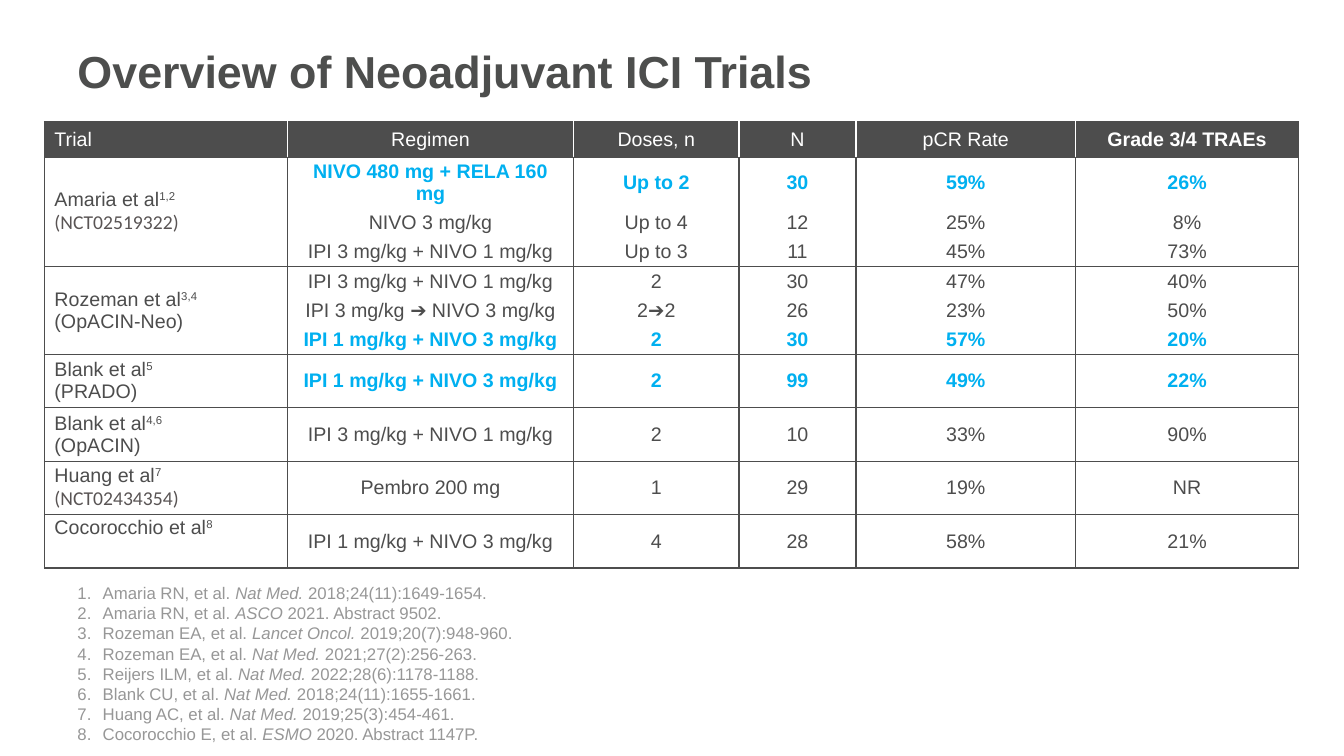
"""Build a slide that compares neoadjuvant ICI trials in a table with references."""
import dataclasses

import lxml.etree
import pptx
import pptx.dml.color
import pptx.enum.text
import pptx.oxml.ns
import pptx.util

Inches = pptx.util.Inches
Pt = pptx.util.Pt
RGBColor = pptx.dml.color.RGBColor
ANCHOR = pptx.enum.text.MSO_ANCHOR
ALIGN = pptx.enum.text.PP_ALIGN
qn = pptx.oxml.ns.qn

TITLE_GREY = RGBColor(0x4D, 0x4E, 0x4D)
DARK_GREY = RGBColor(0x4D, 0x4D, 0x4D)
REGISTRY_GREY = RGBColor(0x59, 0x54, 0x54)
REFERENCE_GREY = RGBColor(0x97, 0x97, 0x97)
HIGHLIGHT = RGBColor(0x00, 0xB0, 0xF0)
WHITE = RGBColor(0xFF, 0xFF, 0xFF)


@dataclasses.dataclass(frozen=True)
class Arm:
    values: tuple[str, ...]
    highlighted: bool = False


@dataclasses.dataclass(frozen=True)
class Trial:
    author: str
    citations: str
    label: str
    arms: tuple[Arm, ...]


@dataclasses.dataclass(frozen=True)
class Reference:
    authors: str
    journal: str
    details: str


HEADERS = ("Trial", "Regimen", "Doses, n", "N", "pCR Rate", "Grade 3/4 TRAEs")
COLUMN_WIDTHS = (2.41, 2.84, 1.64, 1.16, 2.18, 2.21)
HEADER_HEIGHT, ARM_HEIGHT, SINGLE_HEIGHT = 0.35, 0.29, 0.53
IPI3_NIVO1 = "IPI 3 mg/kg + NIVO 1 mg/kg"
IPI1_NIVO3 = "IPI 1 mg/kg + NIVO 3 mg/kg"

TRIALS = (
    Trial("Amaria et al", "1,2", "(NCT02519322)", (
        Arm(("NIVO 480 mg + RELA 160 mg", "Up to 2", "30", "59%", "26%"), True),
        Arm(("NIVO 3 mg/kg", "Up to 4", "12", "25%", "8%")),
        Arm((IPI3_NIVO1, "Up to 3", "11", "45%", "73%")))),
    Trial("Rozeman et al", "3,4", "(OpACIN-Neo)", (
        Arm((IPI3_NIVO1, "2", "30", "47%", "40%")),
        Arm(("IPI 3 mg/kg ➔ NIVO 3 mg/kg", "2➔2", "26", "23%", "50%")),
        Arm((IPI1_NIVO3, "2", "30", "57%", "20%"), True))),
    Trial("Blank et al", "5", "(PRADO)", (Arm((IPI1_NIVO3, "2", "99", "49%", "22%"), True),)),
    Trial("Blank et al", "4,6", "(OpACIN)", (Arm((IPI3_NIVO1, "2", "10", "33%", "90%")),)),
    Trial("Huang et al", "7", "(NCT02434354)",
          (Arm(("Pembro 200 mg", "1", "29", "19%", "NR")),)),
    Trial("Cocorocchio et al", "8", "", (Arm((IPI1_NIVO3, "4", "28", "58%", "21%")),)),
)

REFERENCES = (
    Reference("Amaria RN, et al. ", "Nat Med.", " 2018;24(11):1649-1654."),
    Reference("Amaria RN, et al. ", "ASCO", " 2021. Abstract 9502."),
    Reference("Rozeman EA, et al. ", "Lancet Oncol.", " 2019;20(7):948-960."),
    Reference("Rozeman EA, et al. ", "Nat Med.", " 2021;27(2):256-263."),
    Reference("Reijers ILM, et al. ", "Nat Med.", " 2022;28(6):1178-1188."),
    Reference("Blank CU, et al. ", "Nat Med.", " 2018;24(11):1655-1661."),
    Reference("Huang AC, et al. ", "Nat Med.", " 2019;25(3):454-461."),
    Reference("Cocorocchio E, et al. ", "ESMO", " 2020. Abstract 1147P."),
)


def add_span(para, text: str, size: float, color: RGBColor, bold: bool = False,
             italic: bool = False, face: str = "Arial"):
    span = para.add_run()
    span.text = text
    span.font.name = face
    span.font.size = Pt(size)
    span.font.bold = bold
    span.font.italic = italic
    span.font.color.rgb = color
    return span


def add_box(page, top: float, height: float, anchor):
    box = page.shapes.add_textbox(Inches(0.67), Inches(top), Inches(11.75), Inches(height))
    box.text_frame.word_wrap = True
    box.text_frame.vertical_anchor = anchor
    return box.text_frame


def style_cell(cell, edges: dict[str, RGBColor], fill: RGBColor | None = None) -> None:
    cell.margin_top = cell.margin_bottom = Inches(0.02)
    cell.vertical_anchor = ANCHOR.MIDDLE
    properties = cell._tc.get_or_add_tcPr()
    for side in "LRTB":
        line = lxml.etree.SubElement(properties, qn(f"a:ln{side}"), w=str(Pt(1)))
        if side in edges:
            paint = lxml.etree.SubElement(line, qn("a:solidFill"))
            lxml.etree.SubElement(paint, qn("a:srgbClr"), val=str(edges[side]))
        else:
            lxml.etree.SubElement(line, qn("a:noFill"))
    if fill is None:
        cell.fill.background()
    else:
        cell.fill.solid()
        cell.fill.fore_color.rgb = fill


def fill_header(table) -> None:
    last = len(HEADERS) - 1
    for column, header in enumerate(HEADERS):
        cell = table.cell(0, column)
        style_cell(cell, {"L": WHITE if column else DARK_GREY,
                          "R": WHITE if column < last else DARK_GREY,
                          "T": DARK_GREY, "B": DARK_GREY}, DARK_GREY)
        para = cell.text_frame.paragraphs[0]
        para.alignment = ALIGN.CENTER if column else ALIGN.LEFT
        add_span(para, header, 14, WHITE, bold=column == last)


def fill_trial(table, trial: Trial, first_row: int) -> None:
    last_row = first_row + len(trial.arms) - 1
    for row, arm in enumerate(trial.arms, first_row):
        edges = {"L": DARK_GREY, "R": DARK_GREY}
        if row == first_row:
            edges["T"] = DARK_GREY
        if row == last_row:
            edges["B"] = DARK_GREY
        for column, value in enumerate(arm.values, 1):
            cell = table.cell(row, column)
            style_cell(cell, edges)
            para = cell.text_frame.paragraphs[0]
            para.alignment = ALIGN.CENTER
            add_span(para, value, 14, HIGHLIGHT if arm.highlighted else DARK_GREY,
                     bold=arm.highlighted)
        style_cell(table.cell(row, 0),
                   dict.fromkeys("LRTB", DARK_GREY) if row == first_row else edges)

    name_cell = table.cell(first_row, 0)
    if last_row > first_row:
        name_cell.merge(table.cell(last_row, 0))
    para = name_cell.text_frame.paragraphs[0]
    add_span(para, trial.author, 14, DARK_GREY)
    citation = add_span(para, trial.citations, 14, DARK_GREY)
    citation._r.get_or_add_rPr().set("baseline", "30000")
    if trial.label:
        registered = trial.label.startswith("(NCT")
        add_span(name_cell.text_frame.add_paragraph(), trial.label, 14,
                 REGISTRY_GREY if registered else DARK_GREY,
                 face="Calibri" if registered else "Arial")
    else:
        name_cell.vertical_anchor = ANCHOR.TOP


def add_trial_table(page) -> None:
    heights = [HEADER_HEIGHT]
    for trial in TRIALS:
        count = len(trial.arms)
        heights += [ARM_HEIGHT if count > 1 else SINGLE_HEIGHT] * count
    table = page.shapes.add_table(len(heights), len(HEADERS), Inches(0.44), Inches(1.21),
                                  Inches(sum(COLUMN_WIDTHS)), Inches(sum(heights))).table
    table.first_row = table.horz_banding = False
    for column, width in zip(table.columns, COLUMN_WIDTHS):
        column.width = Inches(width)
    for row, height in zip(table.rows, heights):
        row.height = Inches(height)
    fill_header(table)
    first_row = 1
    for trial in TRIALS:
        fill_trial(table, trial, first_row)
        first_row += len(trial.arms)


def add_references(page) -> None:
    frame = add_box(page, 5.64, 1.79, ANCHOR.BOTTOM)
    for index, reference in enumerate(REFERENCES):
        para = frame.add_paragraph() if index else frame.paragraphs[0]
        para.line_spacing = Pt(14.4)
        properties = para._p.get_or_add_pPr()
        properties.set("marL", str(Inches(0.25)))
        properties.set("indent", str(-Inches(0.25)))
        lxml.etree.SubElement(properties, qn("a:buFont"), typeface="+mj-lt")
        lxml.etree.SubElement(properties, qn("a:buAutoNum"), type="arabicPeriod")
        add_span(para, reference.authors, 12, REFERENCE_GREY)
        add_span(para, reference.journal, 12, REFERENCE_GREY, italic=True)
        add_span(para, reference.details, 12, REFERENCE_GREY)


def main() -> None:
    deck = pptx.Presentation()
    deck.slide_width, deck.slide_height = Inches(13.33), Inches(7.5)
    page = deck.slides.add_slide(deck.slide_layouts[6])
    title = add_box(page, 0.22, 0.96, ANCHOR.MIDDLE)
    add_span(title.paragraphs[0], "Overview of Neoadjuvant ICI Trials", 32, TITLE_GREY, bold=True)
    add_trial_table(page)
    add_references(page)
    deck.save("out.pptx")


if __name__ == "__main__":
    main()
